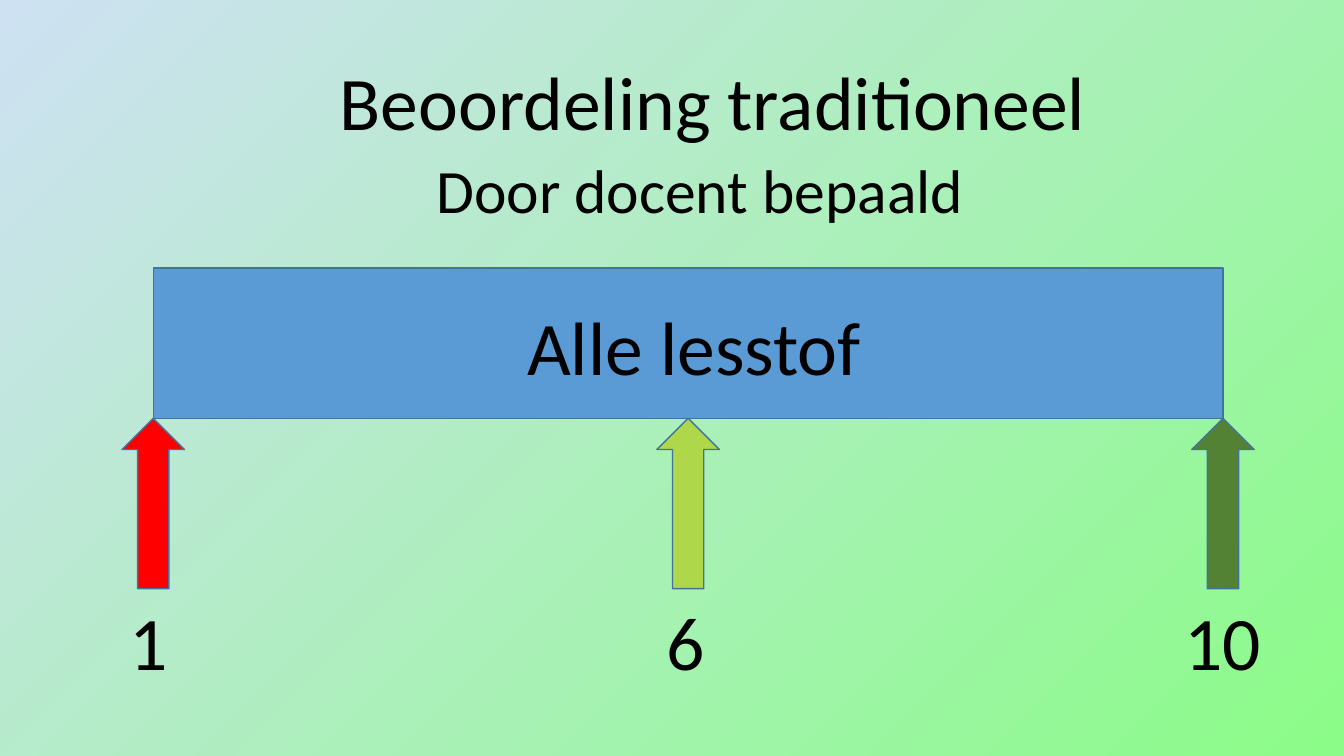
from pptx import Presentation
from pptx.dml.color import RGBColor
from pptx.enum.shapes import MSO_SHAPE
from pptx.enum.text import MSO_ANCHOR, MSO_AUTO_SIZE, PP_ALIGN
from pptx.util import Inches, Pt

RECTANGLE, UP_ARROW = MSO_SHAPE.RECTANGLE, MSO_SHAPE.UP_ARROW
TOP, LEFT = MSO_ANCHOR.TOP, PP_ALIGN.LEFT
FIT_SHAPE = MSO_AUTO_SIZE.SHAPE_TO_FIT_TEXT
TITLE_ONLY = 5

FONT, INK, OUTLINE, BAR_BLUE = "Calibri", "000000", "43729D", "5B9BD5"
BACKGROUND = ["CEE1F2", "8BFC88"]

# text, size, (left, top, width, height)
TITLE = ("Beoordeling traditioneel", 54, (3.27, 0.49, 7.91, 1))
LABELS = [
    ("Door docent bepaald", 44, (4.23, 1.46, 5.57, 0.83)),
    ("Alle lesstof", 54, (5.13, 2.93, 3.76, 1)),
]
# grade, arrow colour, left and width of the grade text
GRADES = [
    ("1", "FF0000", 1.19, 0.49),
    ("6", "AED749", 6.51, 0.64),
    ("10", "548235", 11.65, 0.97),
]
BAR_LEFT, BAR_TOP, BAR_WIDTH, BAR_HEIGHT = 1.52, 2.66, 10.61, 1.49
ARROW_WIDTH, ARROW_HEIGHT = 0.62, 1.69
GRADE_TOP = 5.85


def color(value):
    return RGBColor.from_string(value)


def add_shape(kind, place, fill=None, line=None):
    shape = slide.shapes.add_shape(kind, *map(Inches, place))
    shape.shadow.inherit = False
    if fill:
        shape.fill.solid()
        shape.fill.fore_color.rgb = color(fill)
    else:
        shape.fill.background()
    if line:
        shape.line.color.rgb = color(line)
        shape.line.width = Pt(1)
    else:
        shape.line.fill.background()


def write(box, text, size):
    frame = box.text_frame
    frame.text = text
    frame.word_wrap = True
    frame.auto_size = FIT_SHAPE
    frame.vertical_anchor = TOP
    para = frame.paragraphs[0]
    para.alignment = LEFT
    font = para.runs[0].font
    font.name, font.size = FONT, Pt(size)
    font.color.rgb = color(INK)


def add_label(text, size, place):
    write(slide.shapes.add_textbox(*map(Inches, place)), text, size)


deck = Presentation()
deck.slide_width, deck.slide_height = Inches(13.33), Inches(7.5)
slide = deck.slides.add_slide(deck.slide_layouts[TITLE_ONLY])

background = slide.background.fill
background.gradient()
background.gradient_angle = 315
for stop, position, value in zip(background.gradient_stops, (0, 1), BACKGROUND):
    stop.position = position
    stop.color.rgb = color(value)

title_text, title_size, title_place = TITLE
title = slide.shapes.title
title.left, title.top, title.width, title.height = map(Inches, title_place)
write(title, title_text, title_size)

half = BAR_WIDTH / 2
for index in range(2):
    add_shape(RECTANGLE, (BAR_LEFT + index * half, BAR_TOP, half, BAR_HEIGHT), BAR_BLUE)
add_shape(RECTANGLE, (BAR_LEFT, BAR_TOP, BAR_WIDTH, BAR_HEIGHT), line=OUTLINE)

for index, (grade, fill, text_left, text_width) in enumerate(GRADES):
    arrow_left = BAR_LEFT + index * half - ARROW_WIDTH / 2
    arrow_top = BAR_TOP + BAR_HEIGHT
    add_shape(UP_ARROW, (arrow_left, arrow_top, ARROW_WIDTH, ARROW_HEIGHT), fill, OUTLINE)
    add_label(grade, 54, (text_left, GRADE_TOP, text_width, 1))

for label in LABELS:
    add_label(*label)

deck.save("out.pptx")
